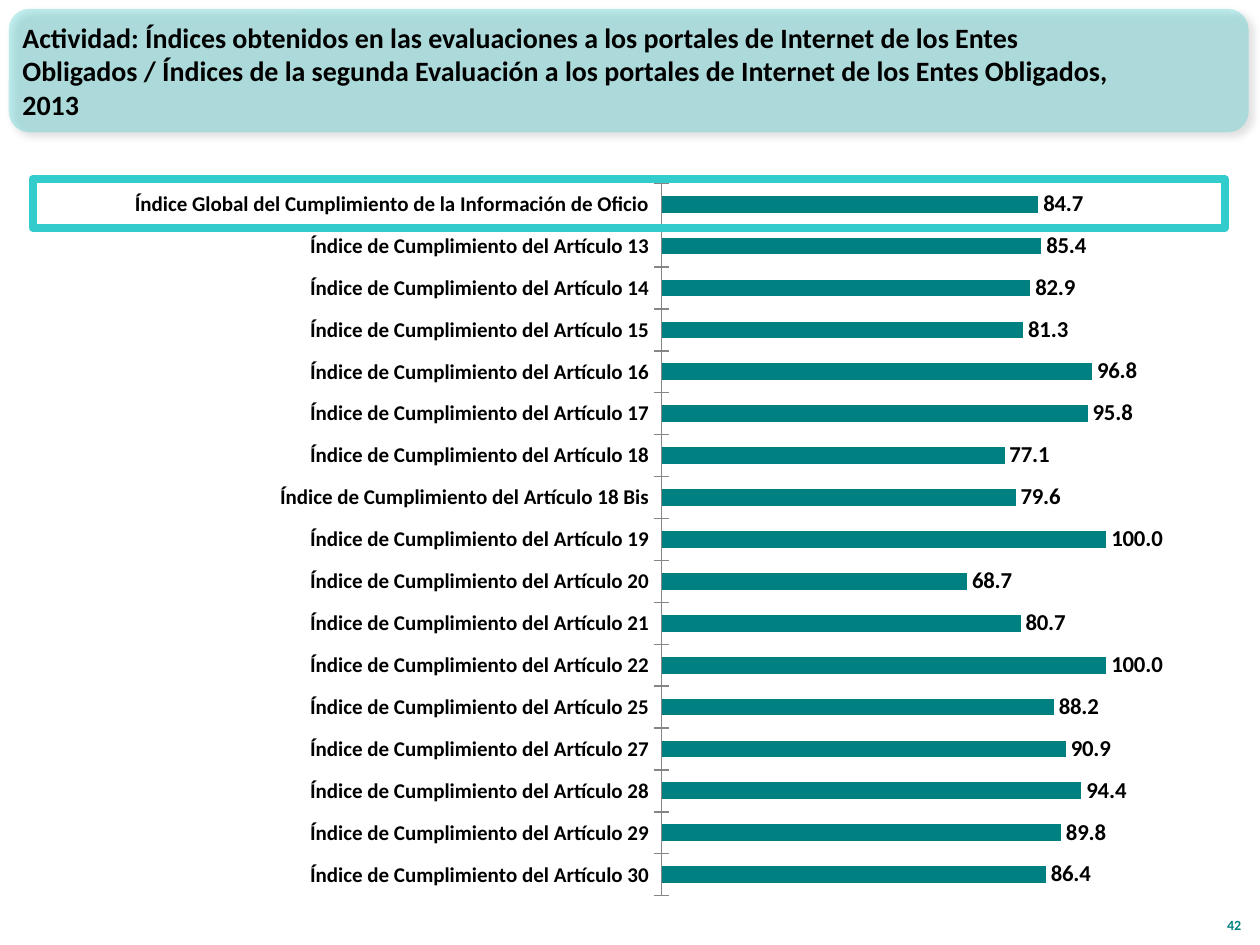
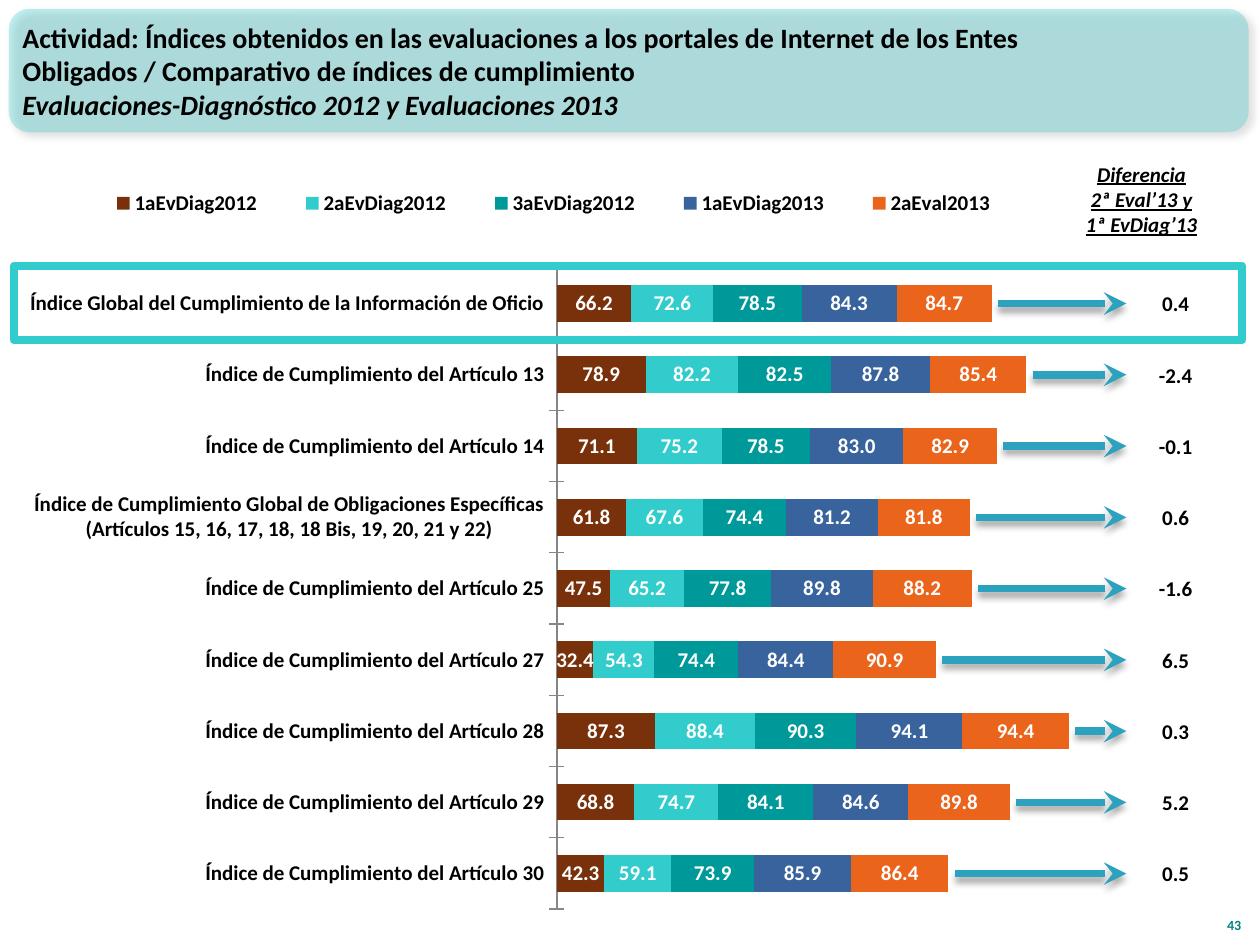
import pptx
import pptx.chart.data
import pptx.dml.color
import pptx.enum.chart
import pptx.enum.shapes
import pptx.enum.text
import pptx.oxml
import pptx.oxml.ns
import pptx.util

Inches = pptx.util.Inches
Pt = pptx.util.Pt
Align = pptx.enum.text.PP_ALIGN
Anchor = pptx.enum.text.MSO_ANCHOR
ChartType = pptx.enum.chart.XL_CHART_TYPE
LabelPosition = pptx.enum.chart.XL_LABEL_POSITION

COLORS = {
    "text": "000000", "white": "FFFFFF", "turquoise": "33CCCC", "teal": "008080",
    "arrow": "2DA2BF", "axis": "868686", "brown": "78310B", "green": "009999",
    "blue": "39639D", "orange": "EB641B",
}
TITLE_BOX = (0.08, 0.09, 9.17, 0.94)
BAND_BOX = (0.07, 0.07, 9.84, 0.98)
NUMBER_BOX = (9.55, 7.06, 0.4, 0.4)
BODY_STYLE = {"name": "Calibri", "size": Pt(12), "bold": True}
TITLE_STYLE = BODY_STYLE | {"size": Pt(16)}
NUMBER_STYLE = BODY_STYLE | {"size": Pt(8)}
HEADING_STYLE = BODY_STYLE | {"italic": True, "underline": True}

TITLE_START = "Actividad: Índices obtenidos en las evaluaciones a los portales de Internet de los Entes Obligados / "
GLOBAL_INDEX = "Índice Global del Cumplimiento de la Información de Oficio"
SPECIFIC_INDEX = ("Índice de Cumplimiento Global de Obligaciones Específicas\n"
                  "(Artículos 15, 16, 17, 18, 18 Bis, 19, 20, 21 y 22)")
SECOND_EVALUATION = {
    "13": 85.4, "14": 82.9, "15": 81.3, "16": 96.8, "17": 95.8, "18": 77.1,
    "18 Bis": 79.6, "19": 100, "20": 68.7, "21": 80.7, "22": 100, "25": 88.2,
    "27": 90.9, "28": 94.4, "29": 89.8, "30": 86.4,
}
COMPARISON = {
    "1aEvDiag2012": ("brown", (66.2, 78.9, 71.1, 61.8, 47.5, 32.4, 87.3, 68.8, 42.3)),
    "2aEvDiag2012": ("turquoise", (72.6, 82.2, 75.2, 67.6, 65.2, 54.3, 88.4, 74.7, 59.1)),
    "3aEvDiag2012": ("green", (78.5, 82.5, 78.5, 74.4, 77.8, 74.4, 90.3, 84.1, 73.9)),
    "1aEvDiag2013": ("blue", (84.3, 87.8, 83, 81.2, 89.8, 84.4, 94.1, 84.6, 85.9)),
    "2aEval2013": ("orange", (84.7, 85.4, 82.9, 81.8, 88.2, 90.9, 94.4, 89.8, 86.4)),
}


def rgb(color):
    """Return the named colour."""
    return pptx.dml.color.RGBColor.from_string(COLORS[color])


def inches(box):
    """Convert the lengths of a box."""
    return [Inches(length) for length in box]


def article(number):
    """Return the category label of an article."""
    return f"Índice de Cumplimiento del Artículo {number}"


def style_font(font, style, color="text"):
    """Apply format values and a colour to a font."""
    for name, value in style.items():
        setattr(font, name, value)
    font.color.rgb = rgb(color)


def add_shadow(shape, alpha, degrees):
    """Give a shape or connector a soft outer shadow."""
    shape.element.spPr.append(pptx.oxml.parse_xml(
        f'<a:effectLst {pptx.oxml.ns.nsdecls("a")}>'
        f'<a:outerShdw blurRad="{Pt(4)}" dist="{Pt(3)}" dir="{degrees * 60000}" rotWithShape="0">'
        f'<a:srgbClr val="{COLORS["text"]}"><a:alpha val="{alpha * 1000}"/></a:srgbClr>'
        '</a:outerShdw></a:effectLst>'))


def add_text(page, box, lines, style, color="text", align=Align.LEFT, anchor=Anchor.TOP):
    """Add a text box with one paragraph for each line."""
    frame = page.shapes.add_textbox(*inches(box)).text_frame
    frame.word_wrap = True
    frame.vertical_anchor = anchor
    for index, line in enumerate(lines):
        para = frame.paragraphs[0] if index == 0 else frame.add_paragraph()
        para.alignment = align
        span = para.add_run()
        span.text = line
        style_font(span.font, style, color)
    return frame


def add_page(deck, title_lines, number):
    """Add a slide with its title band and page number."""
    page = deck.slides.add_slide(deck.slide_layouts[6])
    band = page.shapes.add_shape(
        pptx.enum.shapes.MSO_SHAPE.ROUNDED_RECTANGLE, *inches(BAND_BOX))
    band.fill.solid()
    band.fill.fore_color.rgb = rgb("turquoise")
    band.element.spPr.xpath("./a:solidFill/a:srgbClr")[0].append(
        pptx.oxml.parse_xml(f'<a:alpha {pptx.oxml.ns.nsdecls("a")} val="30000"/>'))
    band.line.fill.background()
    add_shadow(band, 40, 45)
    title = add_text(page, TITLE_BOX, title_lines, TITLE_STYLE, anchor=Anchor.MIDDLE)
    for para in title.paragraphs[1:]:
        para.font.italic = True
        para.runs[0].font.italic = True
    add_text(page, NUMBER_BOX, [str(number)], NUMBER_STYLE, "teal", Align.RIGHT, Anchor.BOTTOM)
    return page


def add_highlight(page, box):
    """Frame the row of the global index."""
    frame = page.shapes.add_shape(pptx.enum.shapes.MSO_SHAPE.RECTANGLE, *inches(box))
    frame.shadow.inherit = False
    frame.fill.background()
    frame.line.color.rgb = rgb("turquoise")
    frame.line.width = Pt(4.5)


def manual_layout(box, inner=False):
    """Return a chart layout element for a box in fractions."""
    target = '<c:layoutTarget val="inner"/>' if inner else ""
    modes = "".join(f'<c:{name}Mode val="edge"/>' for name in "xy")
    sizes = "".join(f'<c:{name} val="{value}"/>' for name, value in zip("xywh", box))
    return pptx.oxml.parse_xml(
        f'<c:layout {pptx.oxml.ns.nsdecls("c")}><c:manualLayout>'
        f'{target}{modes}{sizes}</c:manualLayout></c:layout>')


def add_bars(page, box, chart_type, categories, series, plot_box, maximum, gap, overlap):
    """Add a horizontal bar chart with hidden value axis and labelled bars."""
    data = pptx.chart.data.CategoryChartData(number_format="0.0")
    data.categories = categories
    for name, (_, values) in series.items():
        data.add_series(name, values)
    chart = page.shapes.add_chart(chart_type, *inches(box), data).chart
    chart.has_title = False
    chart.has_legend = False
    style_font(chart.font, BODY_STYLE)

    area = chart.element.xpath("./c:chart/c:plotArea")[0]
    for layout in area.xpath("./c:layout"):
        area.remove(layout)
    area.insert(0, manual_layout(plot_box, inner=True))

    axis = chart.category_axis
    axis.reverse_order = True
    axis.major_tick_mark = pptx.enum.chart.XL_TICK_MARK.CROSS
    axis.format.line.color.rgb = rgb("axis")
    style_font(axis.tick_labels.font, BODY_STYLE)
    scale = chart.value_axis
    for name, value in {"minimum_scale": 0, "maximum_scale": maximum,
                        "has_major_gridlines": False, "visible": False}.items():
        setattr(scale, name, value)

    plot = chart.plots[0]
    for name, value in {"gap_width": gap, "overlap": overlap, "vary_by_categories": False}.items():
        setattr(plot, name, value)
    stacked = chart_type == ChartType.BAR_STACKED
    for bars, (color, _) in zip(plot.series, series.values()):
        bars.format.fill.solid()
        bars.format.fill.fore_color.rgb = rgb(color)
        labels = bars.data_labels
        for name, value in {
            "show_value": True, "number_format": "0.0", "number_format_is_linked": False,
            "position": LabelPosition.CENTER if stacked else LabelPosition.OUTSIDE_END,
        }.items():
            setattr(labels, name, value)
        style_font(labels.font, BODY_STYLE | {"size": Pt(12 if stacked else 13)},
                   "white" if stacked else "text")
    return chart


def add_legend(chart, box):
    """Place the legend above the bars."""
    chart.has_legend = True
    chart.legend.position = pptx.enum.chart.XL_LEGEND_POSITION.TOP
    chart.legend.include_in_layout = False
    style_font(chart.legend.font, BODY_STYLE)
    chart.element.xpath(".//c:legend/c:legendPos")[0].addnext(manual_layout(box))


def add_arrow(page, start, end, middle):
    """Draw a horizontal arrow from a bar to its difference."""
    arrow = page.shapes.add_connector(
        pptx.enum.shapes.MSO_CONNECTOR.STRAIGHT, *inches((start, middle, end, middle)))
    arrow.line.color.rgb = rgb("arrow")
    arrow.line.width = Pt(4.33)
    arrow.line._get_or_add_ln().append(pptx.oxml.parse_xml(
        f'<a:tailEnd {pptx.oxml.ns.nsdecls("a")} type="stealth"/>'))
    add_shadow(arrow, 35, 90)


def add_differences(page, chart_box, plot_box, maximum):
    """Show the change between the last two evaluations beside each bar."""
    left, top, width, height = chart_box
    bar_left = left + plot_box[0] * width
    bar_width = plot_box[2] * width
    rows = list(zip(*(values for _, values in COMPARISON.values())))
    pitch = plot_box[3] * height / len(rows)
    arrow_end = 8.94
    for index, values in enumerate(rows):
        middle = top + plot_box[1] * height + (index + 0.5) * pitch
        bar_end = bar_left + sum(values) / maximum * bar_width
        add_arrow(page, bar_end + 0.05, arrow_end, middle)
        add_text(page, (arrow_end, middle - 0.15, 0.78, 0.3),
                 [f"{values[-1] - values[-2]:.1f}"], BODY_STYLE, align=Align.CENTER)


def build_second_evaluation(deck):
    """Build the slide with the indices of the second evaluation."""
    page = add_page(deck, [TITLE_START + "Índices de la segunda Evaluación a los portales "
                           "de Internet de los Entes Obligados, 2013"], 42)
    categories = [GLOBAL_INDEX, *map(article, SECOND_EVALUATION)]
    series = {"Series 1": ("teal", (84.7, *SECOND_EVALUATION.values()))}
    add_bars(page, (0.53, 1.33, 8.96, 5.94), ChartType.BAR_CLUSTERED, categories, series,
             (0.527, 0.021, 0.394, 0.952), 100, 150, -25)
    add_highlight(page, (0.26, 1.42, 9.46, 0.39))


def build_comparison(deck):
    """Build the slide that compares the five evaluations."""
    page = add_page(deck, [TITLE_START + "Comparativo de índices de cumplimiento",
                           "Evaluaciones-Diagnóstico 2012 y Evaluaciones 2013"], 43)
    chart_box = (0.16, 1.23, 8.73, 6.14)
    plot_box = (0.488, 0.146, 0.512, 0.829)
    maximum = 500
    categories = [GLOBAL_INDEX, article(13), article(14), SPECIFIC_INDEX,
                  *map(article, (25, 27, 28, 29, 30))]
    chart = add_bars(page, chart_box, ChartType.BAR_STACKED, categories, COMPARISON,
                     plot_box, maximum, 95, 100)
    add_legend(chart, (0.05, 0.03, 0.87, 0.065))
    add_highlight(page, (0.11, 2.11, 9.75, 0.59))
    add_text(page, (8.23, 1.23, 1.66, 0.71), ["Diferencia", "2ª Eval’13 y", "1ª EvDiag’13"],
             HEADING_STYLE, align=Align.CENTER)
    add_differences(page, chart_box, plot_box, maximum)


def main():
    """Build and save the deck."""
    deck = pptx.Presentation()
    deck.slide_width = Inches(10)
    deck.slide_height = Inches(7.5)
    build_second_evaluation(deck)
    build_comparison(deck)
    deck.save("out.pptx")


if __name__ == "__main__":
    main()
